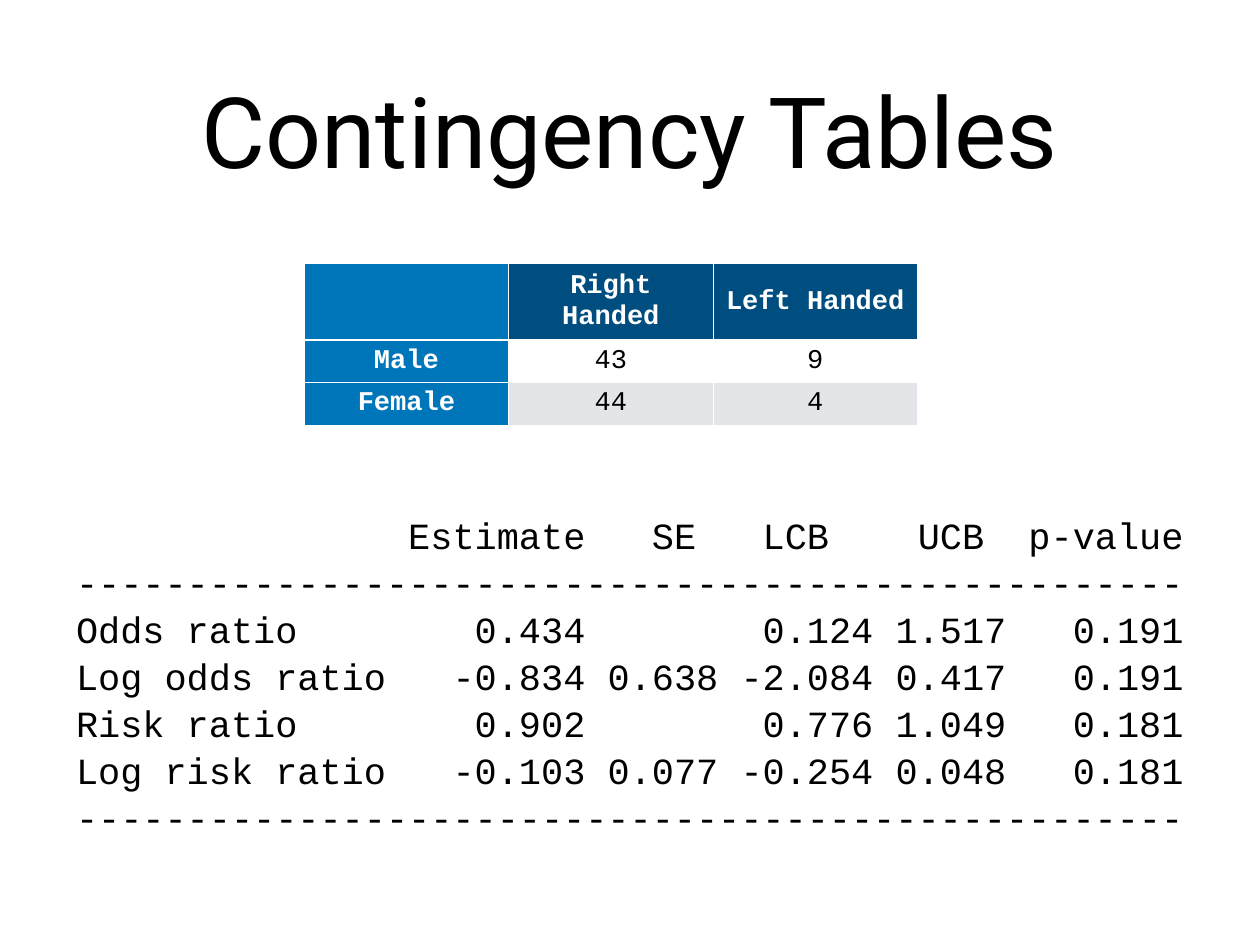
from lxml.etree import SubElement
from pptx import Presentation
from pptx.dml.color import RGBColor
from pptx.enum.text import MSO_ANCHOR, PP_ALIGN
from pptx.oxml.ns import qn
from pptx.util import Cm, Pt

# Content
TITLE = "Contingency Tables"
COUNTS = [
    ("", "Right Handed", "Left Handed"),
    ("Male", "43", "9"),
    ("Female", "44", "4"),
]
RULE = "-" * 50
HEADINGS = ("", "Estimate", "SE", "LCB", "UCB", "p-value")
ESTIMATES = [
    ("Odds ratio", "0.434", "", "0.124", "1.517", "0.191"),
    ("Log odds ratio", "-0.834", "0.638", "-2.084", "0.417", "0.191"),
    ("Risk ratio", "0.902", "", "0.776", "1.049", "0.181"),
    ("Log risk ratio", "-0.103", "0.077", "-0.254", "0.048", "0.181"),
]

# Style
COLORS = {
    "text": "000000",
    "label": "FFFFFF",
    "header": "004D80",
    "side": "0076BA",
    "plain": "FFFFFF",
    "band": "E3E5E8",
}
TITLE_FONT, MONO_FONT = "Roboto", "Courier New"
INSET = Cm(0.15)

# Right edges of the columns, counted in characters
CHARACTER_WIDTH = 0.635
HEADING_ENDS = (23, 28, 34, 41, 50)
VALUE_ENDS = (23, 29, 36, 42, 50)


def add_text(paragraph, text, font, size, color="text", bold=False):
    run = paragraph.add_run()
    run.text = text
    run.font.name = font
    run.font.size = Pt(size)
    run.font.bold = bold
    run.font.color.rgb = RGBColor.from_string(COLORS[color])


def set_insets(target):
    target.margin_left = target.margin_right = INSET
    target.margin_top = target.margin_bottom = INSET
    target.vertical_anchor = MSO_ANCHOR.MIDDLE


def add_right_tabs(paragraph, ends):
    tab_list = SubElement(paragraph._p.get_or_add_pPr(), qn("a:tabLst"))
    for end in ends:
        position = Cm(end * CHARACTER_WIDTH)
        SubElement(tab_list, qn("a:tab"), pos=str(int(position)), algn="r")


def add_title(slide):
    title = slide.shapes.title
    title.left, title.top = Cm(2.64), Cm(0.71)
    title.width, title.height = Cm(30.84), Cm(5.99)
    set_insets(title.text_frame)
    paragraph = title.text_frame.paragraphs[0]
    paragraph.alignment = PP_ALIGN.CENTER
    add_text(paragraph, TITLE, TITLE_FONT, 80)


def cell_fill(row, column):
    if column == 0:
        return "side"
    if row == 0:
        return "header"
    return "plain" if row % 2 else "band"


def add_counts(slide):
    column_width, row_heights = 5.86, (2.18, 1.22, 1.22)
    table = slide.shapes.add_table(
        len(COUNTS), len(COUNTS[0]), Cm(8.72), Cm(7.57),
        Cm(column_width * len(COUNTS[0])), Cm(sum(row_heights)),
    ).table
    for column in table.columns:
        column.width = Cm(column_width)
    for row, height in zip(table.rows, row_heights):
        row.height = Cm(height)
    for row, texts in enumerate(COUNTS):
        for column, text in enumerate(texts):
            cell = table.cell(row, column)
            set_insets(cell)
            cell.fill.solid()
            cell.fill.fore_color.rgb = RGBColor.from_string(COLORS[cell_fill(row, column)])
            is_label = row == 0 or column == 0
            paragraph = cell.text_frame.paragraphs[0]
            paragraph.alignment = PP_ALIGN.CENTER
            if text:
                add_text(paragraph, text, MONO_FONT, 22, "label" if is_label else "text", is_label)


def add_estimates(slide):
    box = slide.shapes.add_textbox(Cm(2.03), Cm(14.8), Cm(32.5), Cm(9.1))
    frame = box.text_frame
    frame.word_wrap = True
    set_insets(frame)
    lines = [(HEADINGS, HEADING_ENDS), ((RULE,), ())]
    lines += [(values, VALUE_ENDS) for values in ESTIMATES]
    lines.append(((RULE,), ()))
    for index, (texts, ends) in enumerate(lines):
        paragraph = frame.add_paragraph() if index else frame.paragraphs[0]
        paragraph.alignment = PP_ALIGN.LEFT
        paragraph.line_spacing = 1.06
        if ends:
            add_right_tabs(paragraph, ends)
        add_text(paragraph, "\t".join(texts), MONO_FONT, 30)


def main():
    presentation = Presentation()
    presentation.slide_width, presentation.slide_height = Cm(36.12), Cm(27.1)
    slide = presentation.slides.add_slide(presentation.slide_layouts[5])
    add_title(slide)
    add_counts(slide)
    add_estimates(slide)
    presentation.save("out.pptx")


if __name__ == "__main__":
    main()
